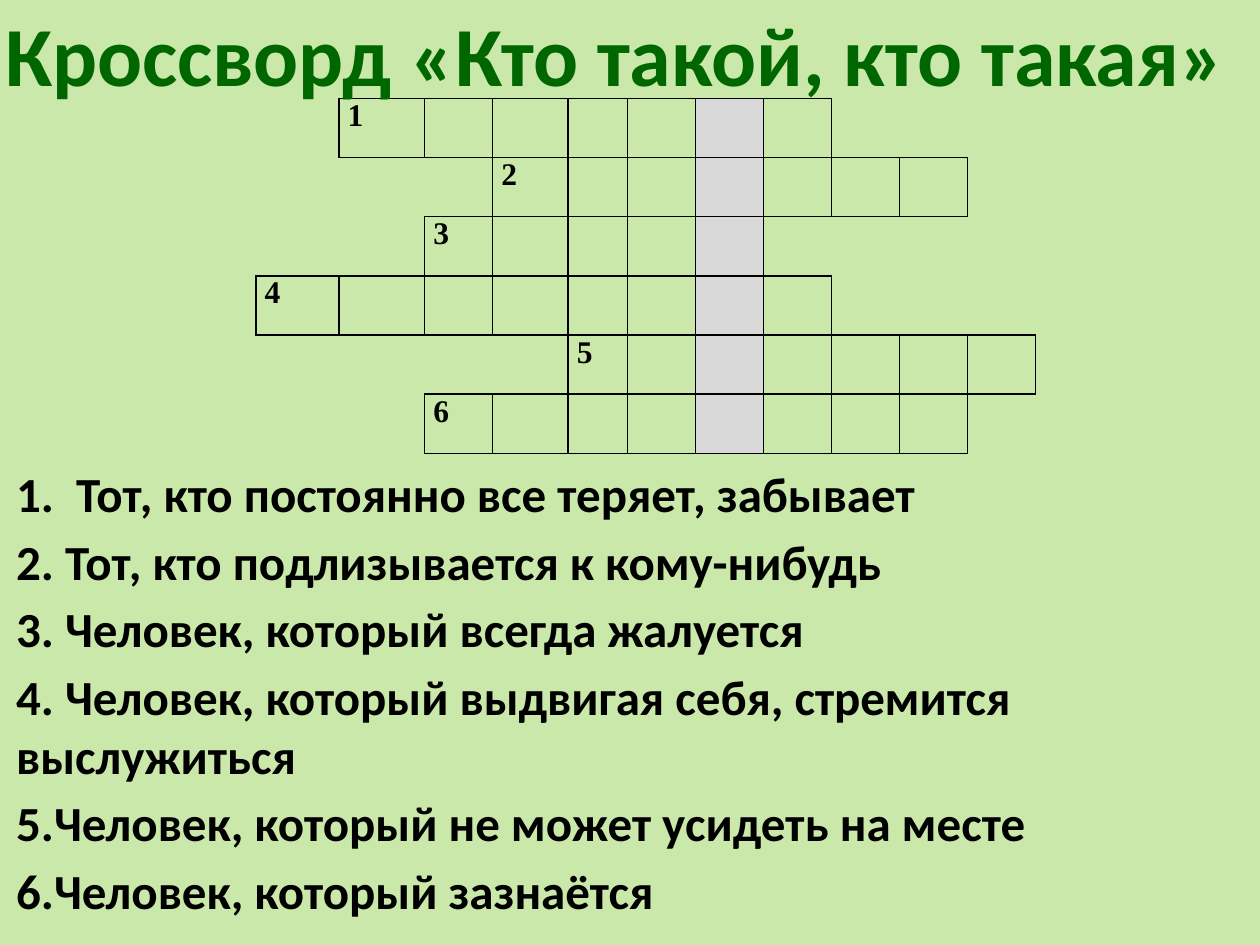
from lxml.etree import SubElement
from pptx import Presentation
from pptx.dml.color import RGBColor as RGB
from pptx.enum.text import MSO_AUTO_SIZE as Auto, PP_ALIGN as Align
from pptx.oxml import parse_xml
from pptx.oxml.ns import nsdecls, qn
from pptx.util import Inches, Pt

BACK = RGB(0xCA, 0xE8, 0xA9)
GREEN = RGB(0x00, 0x66, 0x00)
BLACK = RGB(0x00, 0x00, 0x00)
GRAY = RGB(0xD9, 0xD9, 0xD9)

TITLE = "Кроссворд «Кто такой, кто такая»"
CLUES = [
    "1.  Тот, кто постоянно все теряет, забывает",
    "2. Тот, кто подлизывается к кому-нибудь",
    "3. Человек, который всегда жалуется",
    "4. Человек, который выдвигая себя, стремится выслужиться",
    "5.Человек, который не может усидеть на месте",
    "6.Человек, который зазнаётся",
]
COLS = [0.66, 0.68, 0.54, 0.6, 0.47] + [0.54] * 6
ROW = 0.47
WORDS = [(1, 7), (3, 7), (2, 5), (0, 8), (4, 7), (2, 8)]
KEY = 6
SIDES = {"L": (0, -1), "R": (0, 1), "T": (-1, 0), "B": (1, 0)}


def set_font(para, name, size, color):
    font = para.font
    font.name, font.size, font.bold = name, Pt(size), True
    font.color.rgb = color


def add_text(slide, box, lines, size, color, wrap=True, align=Align.LEFT, gap=0):
    frame = slide.shapes.add_textbox(*map(Inches, box)).text_frame
    frame.word_wrap = wrap
    frame.auto_size = Auto.SHAPE_TO_FIT_TEXT
    frame.text = "\n".join(lines)
    for para in frame.paragraphs:
        set_font(para, "Calibri", size, color)
        para.alignment = align
        para.space_before = Pt(gap)


def is_used(row, col):
    if not 0 <= row < len(WORDS):
        return False
    start, count = WORDS[row]
    return start <= col < start + count


def set_edges(cell, row, col):
    props = cell._tc.get_or_add_tcPr()
    for spot, (side, (down, right)) in enumerate(SIDES.items()):
        line = parse_xml(f'<a:ln{side} {nsdecls("a")} w="{Pt(1)}"/>')
        if is_used(row, col) or is_used(row + down, col + right):
            fill = SubElement(line, qn("a:solidFill"))
            SubElement(fill, qn("a:srgbClr"), val=str(BLACK))
        else:
            SubElement(line, qn("a:noFill"))
        props.insert(spot, line)


def fill_cell(cell, row, col):
    cell.margin_left = cell.margin_right = Inches(0.07)
    cell.margin_top = cell.margin_bottom = 0
    if col == KEY:
        cell.fill.solid()
        cell.fill.fore_color.rgb = GRAY
    else:
        cell.fill.background()
    if col == WORDS[row][0]:
        cell.text = str(row + 1)
    set_font(cell.text_frame.paragraphs[0], "Times New Roman", 18, BLACK)
    set_edges(cell, row, col)


def add_grid(slide, left, top):
    box = map(Inches, (left, top, sum(COLS), ROW * len(WORDS)))
    table = slide.shapes.add_table(len(WORDS), len(COLS), *box).table
    table.first_row = table.horz_banding = False
    for col, width in enumerate(COLS):
        table.columns[col].width = Inches(width)
    for row in range(len(WORDS)):
        table.rows[row].height = Inches(ROW)
        for col in range(len(COLS)):
            fill_cell(table.cell(row, col), row, col)


def main():
    deck = Presentation()
    deck.slide_width, deck.slide_height = Inches(10), Inches(7.5)
    slide = deck.slides.add_slide(deck.slide_layouts[6])
    slide.background.fill.solid()
    slide.background.fill.fore_color.rgb = BACK
    add_text(slide, (0.03, 3.63, 10.08, 3.87), CLUES, 28, BLACK, gap=5)
    add_grid(slide, 2.03, 0.78)
    add_text(slide, (-0.29, -0.03, 10.35, 0.91), [TITLE], 48, GREEN,
             wrap=False, align=Align.CENTER)
    deck.save("out.pptx")


if __name__ == "__main__":
    main()
